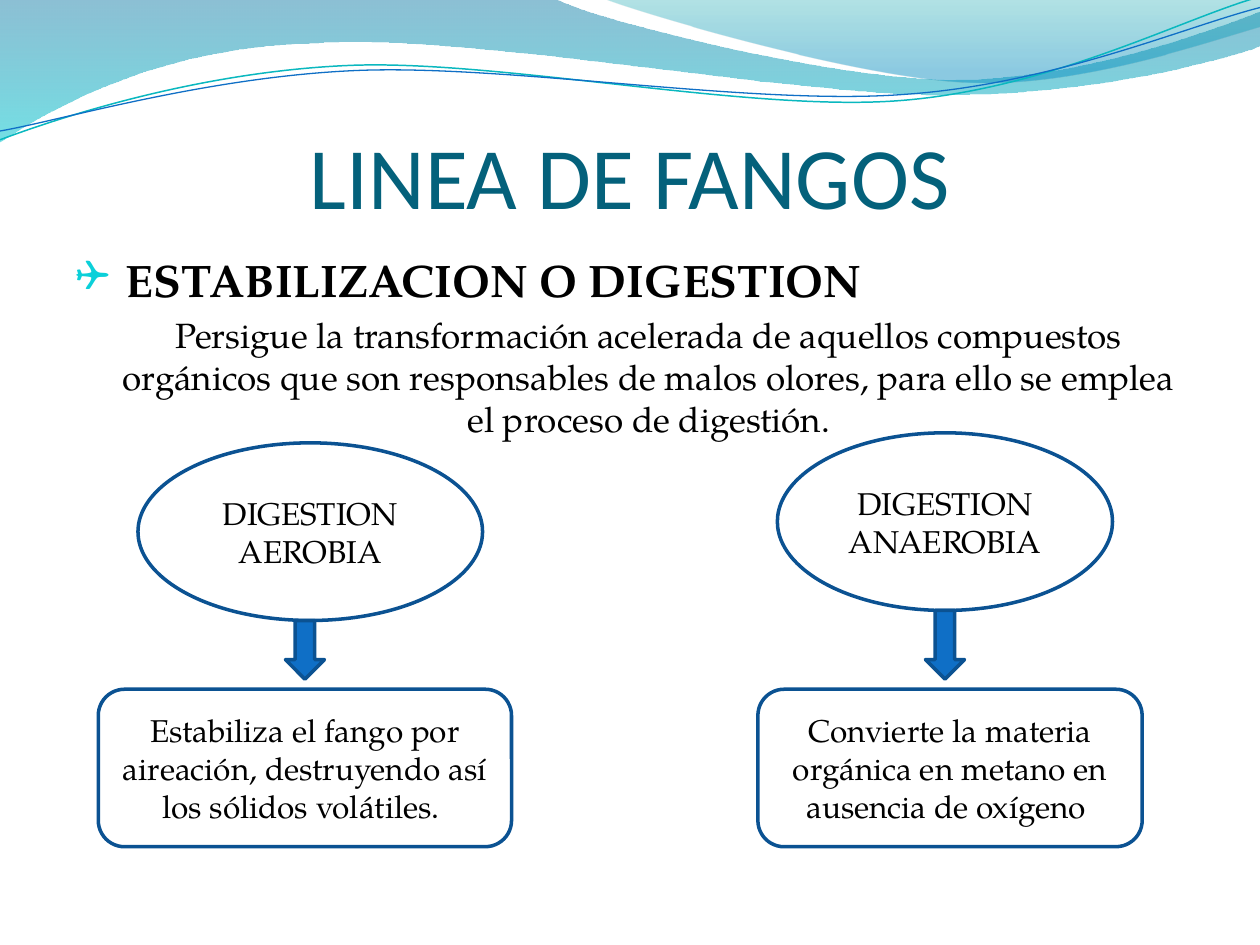
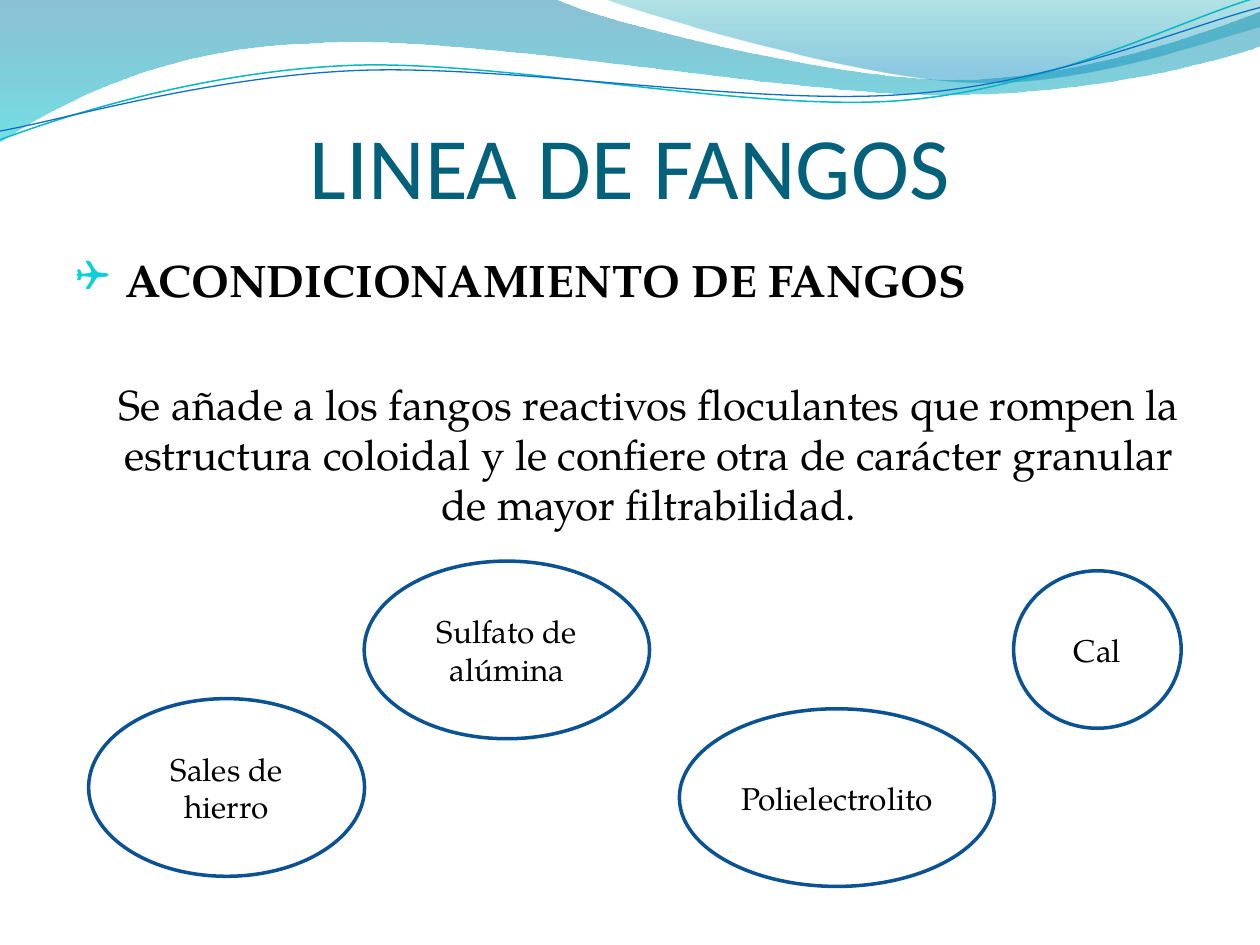
"""Builds two slides on sludge treatment: digestion and conditioning."""
from dataclasses import dataclass

from lxml.etree import SubElement
from pptx import Presentation
from pptx.dml.color import RGBColor
from pptx.enum.shapes import MSO_SHAPE as Preset
from pptx.enum.text import MSO_ANCHOR as Anchor, MSO_AUTO_SIZE as AutoSize, PP_ALIGN as Align
from pptx.oxml.ns import qn
from pptx.util import Emu, Inches, Pt

WIDTH, HEIGHT = Inches(10), Inches(7.5)
COLUMNS, ROWS = 100, 75

TITLE_TEAL = RGBColor(0x04, 0x61, 0x7B)
BULLET_CYAN = RGBColor(0x0B, 0xD0, 0xD9)
OUTLINE_BLUE = RGBColor(0x0B, 0x52, 0x92)
ACCENT_BLUE = RGBColor(0x0F, 0x6F, 0xC6)
LINE_TURQUOISE = RGBColor(0x0A, 0xB8, 0xBF)
DEEP_BLUE = RGBColor(0x00, 0x74, 0xA1)
BRIGHT_CYAN = RGBColor(0x00, 0xC6, 0xCF)
SEA_GREEN = RGBColor(0x00, 0xA1, 0xA9)
SKY_BLUE = RGBColor(0x00, 0x8B, 0xBF)
BLACK = RGBColor(0, 0, 0)
WHITE = RGBColor(0xFF, 0xFF, 0xFF)

TITLE_FONT, BODY_FONT, BULLET_FONT = "Calibri", "TeX Gyre Pagella", "Wingdings"
TITLE = "LINEA DE FANGOS"
TITLE_TOP = 7.7
ARROW_WIDTH, ARROW_TIP = 3.1, 53.9
BOX_TOP, BOX_HEIGHT = 54.7, 12.5

Point = tuple[float, float]


@dataclass(frozen=True)
class Area:
    """A rectangle in grid columns and rows."""
    left: float
    top: float
    width: float
    height: float

    def lengths(self) -> tuple[Emu, Emu, Emu, Emu]:
        """Return left, top, width and height in EMU."""
        return column(self.left), row(self.top), column(self.width), row(self.height)


@dataclass(frozen=True)
class Stop:
    """A gradient stop with its position and opacity in percent."""
    position: int
    color: RGBColor
    opacity: int


@dataclass(frozen=True)
class Wave:
    """A header outline whose segments hold one point (line) or three (curve)."""
    start: Point
    segments: tuple[tuple[Point, ...], ...]
    stops: tuple[Stop, ...] = ()
    color: RGBColor | None = None
    weight: float = 0


@dataclass(frozen=True)
class Bubble:
    """An outlined shape holding a label."""
    label: str
    area: Area
    preset: Preset = Preset.OVAL


@dataclass(frozen=True)
class Digestion:
    """A kind of digestion with its explanation below an arrow."""
    kind: Bubble
    effect: str
    box_left: float
    box_width: float
    arrow_center: float


@dataclass(frozen=True)
class Topic:
    """The heading and explanation at the top of a slide."""
    heading: str
    explanation: str
    size: int
    gap: int
    title_height: float


WAVES = (
    Wave((0, 0),
         (((44, -0.1),),
          ((47.6, 1.7), (66.4, 6.3), (75.8, 6.3)),
          ((85.3, 6.3), (95.8, 2.6), (100, 0.9)),
          ((100.1, 3.6),),
          ((98.3, 4.4), (87, 7.6), (74.6, 7.5)),
          ((62.2, 7.5), (38.2, 2.8), (25.7, 3.4)),
          ((12.9, 3.6), (4.6, 8.3), (-0.1, 11.3)),
          ((0, 0),)),
         stops=(Stop(0, DEEP_BLUE, 45), Stop(100, BRIGHT_CYAN, 55))),
    Wave((47.9, -0.1),
         (((50.9, 1.1), (68.2, 6.2), (76.9, 6.5)),
          ((85.6, 6.9), (96.1, 3.2), (100, 2.1)),
          ((100, 0),),
          ((47.9, -0.1),)),
         stops=(Stop(0, SEA_GREEN, 30), Stop(80, SKY_BLUE, 45))),
    Wave((0, 11.1),
         (((4.8, 9.3), (15.8, 5.7), (27.7, 5.2)),
          ((39.5, 4.7), (59.3, 8.9), (71.3, 8)),
          ((83.3, 7.1), (93.8, 1.5), (99.8, -0.2))),
         color=LINE_TURQUOISE, weight=0.85),
    Wave((0, 10.4),
         (((4.7, 9.6), (16.4, 6.1), (28.3, 5.6)),
          ((40.3, 5.1), (59.7, 8.4), (71.7, 7.5)),
          ((83.6, 6.7), (94.1, 2.1), (100, 0.6))),
         color=ACCENT_BLUE, weight=0.75),
)

STABILIZATION = Topic(
    "ESTABILIZACION O DIGESTION",
    "Persigue la transformación acelerada de aquellos compuestos orgánicos que son "
    "responsables de malos olores, para ello se emplea el proceso de digestión.",
    size=20, gap=4, title_height=10.3)
CONDITIONING = Topic(
    "ACONDICIONAMIENTO DE FANGOS",
    "Se añade a los fangos reactivos floculantes que rompen la estructura coloidal y le "
    "confiere otra de carácter granular de mayor filtrabilidad.",
    size=24, gap=41, title_height=9.5)

DIGESTIONS = (
    Digestion(Bubble("DIGESTION AEROBIA", Area(10.95, 35.15, 27.35, 14.1)),
              "Estabiliza el fango por aireación, destruyendo así los sólidos volátiles. ",
              7.8, 32.8, 24.2),
    Digestion(Bubble("DIGESTION ANAEROBIA", Area(61.7, 34.35, 26.6, 14.1)),
              "Convierte la materia orgánica en metano en ausencia de oxígeno ",
              60.15, 30.5, 75),
)

REAGENTS = (
    Bubble("Sales de hierro", Area(7.03, 55.45, 21.9, 14.1)),
    Bubble("Sulfato de alúmina", Area(28.9, 44.53, 22.65, 14.1)),
    Bubble("Cal", Area(80.45, 45.3, 13.3, 12.5)),
    Bubble("Polielectrolito", Area(53.92, 56.25, 25, 14.1)),
)


def column(count: float) -> Emu:
    """Return the width of a number of grid columns."""
    return Emu(round(WIDTH * count / COLUMNS))


def row(count: float) -> Emu:
    """Return the height of a number of grid rows."""
    return Emu(round(HEIGHT * count / ROWS))


def write(paragraph, text: str, *, size: float, font=BODY_FONT, color=BLACK,
          bold=False, align=Align.CENTER, before: float = 0) -> None:
    """Write formatted text into a paragraph."""
    paragraph.alignment = align
    paragraph.space_before = Pt(before)
    run = paragraph.add_run()
    run.text = text
    run.font.name, run.font.size, run.font.bold = font, Pt(size), bold
    run.font.color.rgb = color


def indent(paragraph, margin: float, first: float = 0) -> None:
    """Set the left margin and first-line indent, in columns."""
    properties = paragraph._p.get_or_add_pPr()
    properties.set("marL", str(column(margin)))
    properties.set("indent", str(column(first)))


def add_bullet(paragraph, mark: str, color: RGBColor, percent: int) -> None:
    """Give a paragraph a coloured bullet."""
    properties = paragraph._p.get_or_add_pPr()
    SubElement(SubElement(properties, qn("a:buClr")), qn("a:srgbClr"), val=str(color))
    SubElement(properties, qn("a:buSzPct"), val=str(percent * 1000))
    SubElement(properties, qn("a:buFont"), typeface=BULLET_FONT, charset="2")
    SubElement(properties, qn("a:buChar"), char=mark)


def fill_gradient(shape, stops: tuple[Stop, ...]) -> None:
    """Fill a shape from top to bottom with translucent stops."""
    shape.fill.gradient()
    gradient = shape._element.spPr.find(qn("a:gradFill"))
    for child in list(gradient):
        gradient.remove(child)
    listing = SubElement(gradient, qn("a:gsLst"))
    for stop in stops:
        mark = SubElement(listing, qn("a:gs"), pos=str(stop.position * 1000))
        color = SubElement(mark, qn("a:srgbClr"), val=str(stop.color))
        SubElement(color, qn("a:alpha"), val=str(stop.opacity * 1000))
    SubElement(gradient, qn("a:lin"), ang="5400000", scaled="0")


def bend(shape, segments: tuple[tuple[Point, ...], ...]) -> None:
    """Turn each three straight steps of a curved segment into one Bezier curve."""
    steps = iter(list(shape._element.iter(qn("a:lnTo"))))
    for segment in segments:
        group = [next(steps) for _ in segment]
        if len(group) == 3:
            outline = group[0].getparent()
            curve = SubElement(outline, qn("a:cubicBezTo"))
            group[0].addprevious(curve)
            for step in group:
                curve.append(step[0])
                outline.remove(step)


def draw_wave(slide, wave: Wave) -> None:
    """Draw one header wave as a filled outline or an open line."""
    x, y = wave.start
    builder = slide.shapes.build_freeform(column(x), row(y))
    points = [(column(x), row(y)) for segment in wave.segments for x, y in segment]
    builder.add_line_segments(points, close=bool(wave.stops))
    shape = builder.convert_to_shape()
    bend(shape, wave.segments)
    shape.shadow.inherit = False
    if wave.stops:
        fill_gradient(shape, wave.stops)
        shape.line.fill.background()
    else:
        shape.fill.background()
        shape.line.color.rgb = wave.color
        shape.line.width = Pt(wave.weight)


def draw_shape(slide, preset: Preset, area: Area, fill: RGBColor):
    """Draw a preset shape with the common blue outline."""
    shape = slide.shapes.add_shape(preset, *area.lengths())
    shape.shadow.inherit = False
    shape.fill.solid()
    shape.fill.fore_color.rgb = fill
    shape.line.color.rgb = OUTLINE_BLUE
    shape.line.width = Pt(2)
    return shape


def draw_bubble(slide, bubble: Bubble) -> None:
    """Draw a white outlined shape with its label."""
    frame = draw_shape(slide, bubble.preset, bubble.area, WHITE).text_frame
    frame.word_wrap = True
    frame.vertical_anchor = Anchor.MIDDLE
    write(frame.paragraphs[0], bubble.label, size=18)


def draw_digestion(slide, digestion: Digestion) -> None:
    """Draw a kind of digestion, its effect and the arrow between them."""
    draw_bubble(slide, digestion.kind)
    box = Area(digestion.box_left, BOX_TOP, digestion.box_width, BOX_HEIGHT)
    draw_bubble(slide, Bubble(digestion.effect, box, Preset.ROUNDED_RECTANGLE))
    start = digestion.kind.area.top + digestion.kind.area.height
    arrow = Area(digestion.arrow_center - ARROW_WIDTH / 2, start, ARROW_WIDTH, ARROW_TIP - start)
    draw_shape(slide, Preset.DOWN_ARROW, arrow, ACCENT_BLUE)


def add_topic_slide(deck, topic: Topic):
    """Add a slide with the waves, the title and a topic's text."""
    slide = deck.slides.add_slide(deck.slide_layouts.get_by_name("Title Only"))
    for wave in WAVES:
        draw_wave(slide, wave)

    title = slide.shapes.title
    title.element.getparent().append(title.element)
    title.left, title.top, title.width, title.height = Area(
        5, TITLE_TOP, 90, topic.title_height).lengths()
    frame = title.text_frame
    frame.auto_size = AutoSize.NONE
    frame.vertical_anchor = Anchor.BOTTOM
    frame.margin_left = frame.margin_right = frame.margin_bottom = 0
    frame.margin_top = row(0.5)
    write(frame.paragraphs[0], TITLE, size=50, font=TITLE_FONT, color=TITLE_TEAL)

    body = slide.shapes.add_textbox(*Area(5, 19.5, 90, 49.6).lengths()).text_frame
    body.word_wrap = True
    heading, explanation = body.paragraphs[0], body.add_paragraph()
    write(heading, topic.heading, size=26, bold=True, align=Align.LEFT, before=5)
    indent(heading, 4, -4)
    add_bullet(heading, "❑", BULLET_CYAN, 95)
    write(explanation, topic.explanation, size=topic.size, before=topic.gap)
    indent(explanation, 3)
    return slide


def main() -> None:
    """Build and save the presentation."""
    deck = Presentation()
    deck.slide_width, deck.slide_height = WIDTH, HEIGHT
    stabilization = add_topic_slide(deck, STABILIZATION)
    for digestion in DIGESTIONS:
        draw_digestion(stabilization, digestion)
    conditioning = add_topic_slide(deck, CONDITIONING)
    for reagent in REAGENTS:
        draw_bubble(conditioning, reagent)
    deck.save("out.pptx")


if __name__ == "__main__":
    main()
